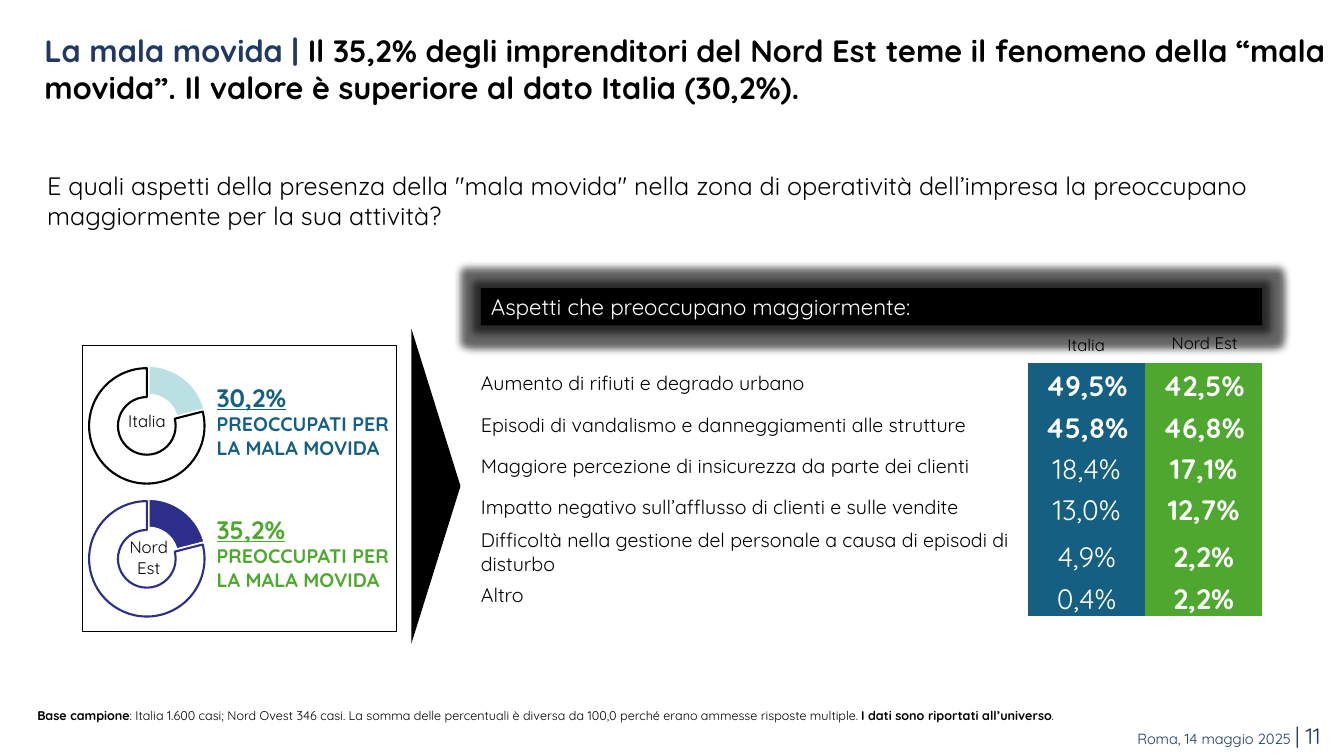
"""Build the slide on business owners' worries about the "mala movida"."""
from dataclasses import dataclass

from lxml.etree import SubElement
from pptx import Presentation
from pptx.chart.data import CategoryChartData
from pptx.dml.color import RGBColor
from pptx.enum.chart import XL_CHART_TYPE as ChartType
from pptx.enum.shapes import MSO_SHAPE as Preset
from pptx.enum.text import MSO_ANCHOR as Anchor, MSO_AUTO_SIZE as AutoSize, PP_ALIGN as Align
from pptx.oxml import parse_xml
from pptx.oxml.ns import nsdecls, qn
from pptx.util import Cm, Pt


@dataclass(frozen=True)
class Theme:
    """Hold the font, colours and type sizes of the slide."""
    font: str = "Quicksand"
    black: str = "000000"
    white: str = "FFFFFF"
    navy: str = "203864"
    italy: str = "156082"
    north_east: str = "4EA72E"
    pale_slice: str = "BBE0E3"
    dark_slice: str = "2D2D8A"
    title: float = 22
    figure: float = 20
    lead: float = 18
    heading: float = 16
    body: float = 14
    label: float = 12
    footer: float = 10.5
    note: float = 9


THEME = Theme()
NO_STYLE = "{2D5ABB26-0587-4C30-8999-92F81FD0307C}"
ASPECTS = [
    ("Aumento di rifiuti e degrado urbano", "49,5%", "42,5%"),
    ("Episodi di vandalismo e danneggiamenti alle strutture", "45,8%", "46,8%"),
    ("Maggiore percezione di insicurezza da parte dei clienti", "18,4%", "17,1%"),
    ("Impatto negativo sull’afflusso di clienti e sulle vendite", "13,0%", "12,7%"),
    ("Difficoltà nella gestione del personale a causa di episodi di disturbo", "4,9%", "2,2%"),
    ("Altro", "0,4%", "2,2%"),
]


def apply_format(target, values):
    """Set each named attribute on the target."""
    for name, value in values.items():
        setattr(target, name, value)


def box(left, top, width, height):
    """Turn centimetres into a position and a size."""
    return Cm(left), Cm(top), Cm(width), Cm(height)


def write(frame, paragraphs, **paragraph_format):
    """Fill a text frame with paragraphs of (text, size, colour, font format) runs."""
    frame.word_wrap = True
    for index, runs in enumerate(paragraphs):
        paragraph = frame.paragraphs[0] if index == 0 else frame.add_paragraph()
        apply_format(paragraph, {"alignment": Align.LEFT, **paragraph_format})
        for text, size, colour, font_format in runs:
            run = paragraph.add_run()
            run.text = text
            values = {"name": THEME.font, "size": Pt(size), "bold": False, **font_format}
            apply_format(run.font, values)
            run.font.color.rgb = RGBColor.from_string(colour)


def add_text(slide, place, paragraphs, **paragraph_format):
    """Add a wrapping text box."""
    shape = slide.shapes.add_textbox(*box(*place))
    write(shape.text_frame, paragraphs, **paragraph_format)


def add_preset(slide, preset, place, fill=None, line=None):
    """Add a preset shape without shadow."""
    shape = slide.shapes.add_shape(preset, *box(*place))
    shape.shadow.inherit = False
    if fill:
        shape.fill.solid()
        shape.fill.fore_color.rgb = RGBColor.from_string(fill)
    else:
        shape.fill.background()
    if line:
        shape.line.color.rgb = RGBColor.from_string(line)
        shape.line.width = Pt(1)
    else:
        shape.line.fill.background()
    return shape


def add_label(slide, place, *lines):
    """Add a small centred label."""
    shape = add_preset(slide, Preset.ROUNDED_RECTANGLE, place)
    shape.text_frame.vertical_anchor = Anchor.TOP
    write(shape.text_frame, [[(line, THEME.label, THEME.black, {})] for line in lines],
          alignment=Align.CENTER)


def add_title(slide):
    """Place and fill the title."""
    title = slide.shapes.title
    apply_format(title, dict(zip(("left", "top", "width", "height"),
                                 box(0.94, 0.69, 32.79, 2.08))))
    apply_format(title.text_frame, {
        "vertical_anchor": Anchor.TOP, "auto_size": AutoSize.NONE,
        "margin_left": Cm(0.18), "margin_right": Cm(0.18),
        "margin_top": Cm(0.1), "margin_bottom": Cm(0.1)})
    bold = {"bold": True}
    write(title.text_frame, [[
        ("La mala movida | ", THEME.title, THEME.navy, bold),
        ("Il 35,2% degli imprenditori del Nord Est teme il fenomeno della “mala movida”. "
         "Il valore è superiore al dato Italia (30,2%).", THEME.title, THEME.black, bold)]],
        line_spacing=1.0)


def add_heading(slide):
    """Add the glowing bar above the table."""
    bar = add_preset(slide, Preset.RECTANGLE, (12.12, 7.26, 19.69, 0.94), THEME.black)
    write(bar.text_frame, [[
        ("Aspetti che preoccupano maggiormente:", THEME.heading, THEME.white, {})]])
    effects = bar._element.spPr.find(qn("a:effectLst"))
    glow = SubElement(effects, qn("a:glow"), rad="139700")
    colour = SubElement(glow, qn("a:srgbClr"), val=THEME.black)
    SubElement(colour, qn("a:alpha"), val="60000")


def add_aspects(slide):
    """Add the table of worrying aspects."""
    graphic = slide.shapes.add_table(len(ASPECTS), 3, *box(12.12, 9.14, 19.69, 6.24))
    table = graphic.table
    apply_format(table, {"first_row": False, "horz_banding": False})
    table._tbl.tblPr.find(qn("a:tableStyleId")).text = NO_STYLE
    for column, width in zip(table.columns, (13.79, 2.95, 2.95)):
        column.width = Cm(width)
    fills = (THEME.white, THEME.italy, THEME.north_east)
    for row, values in enumerate(ASPECTS):
        for column, (value, fill) in enumerate(zip(values, fills)):
            cell = table.cell(row, column)
            cell.fill.solid()
            cell.fill.fore_color.rgb = RGBColor.from_string(fill)
            margin = Cm(0.03) if column else 0
            apply_format(cell, {
                "margin_left": margin, "margin_right": margin,
                "margin_top": margin, "margin_bottom": 0,
                "vertical_anchor": Anchor.BOTTOM if column else Anchor.MIDDLE})
            if column:
                bold = column == 2 or row < 2
                run = (value, THEME.figure, THEME.white, {"bold": bold})
            else:
                run = (value, THEME.body, THEME.black, {})
            write(cell.text_frame, [[run]], alignment=Align.CENTER if column else Align.LEFT)


def add_ring(slide, top, slice_colour, outline):
    """Add a doughnut with one coloured slice."""
    data = CategoryChartData()
    data.categories = ["1", "2"]
    data.add_series("Series 1", (21, 79))
    chart = slide.shapes.add_chart(ChartType.DOUGHNUT, *box(0.58, top, 6.35, 3.73), data).chart
    apply_format(chart, {"has_legend": False, "has_title": False})
    apply_format(chart.font, {"name": "Arial", "size": Pt(10)})
    chart.font.color.rgb = RGBColor.from_string(THEME.black)
    series = chart.plots[0].series[0]
    for index, (fill, line) in enumerate(((slice_colour, THEME.white), (THEME.white, outline))):
        style = series.points[index].format
        style.fill.solid()
        style.fill.fore_color.rgb = RGBColor.from_string(fill)
        style.line.color.rgb = RGBColor.from_string(line)
        style.line.width = Pt(1.5)
    namespace = nsdecls("c")
    series._element.find(qn("c:dPt")).addprevious(
        parse_xml(f'<c:explosion {namespace} val="5"/>'))
    plot_area = chart._chartSpace.chart.plotArea
    for layout in plot_area.findall(qn("c:layout")):
        plot_area.remove(layout)
    spots = "".join(f'<c:{name} val="{value}"/>' for name, value in (
        ("layoutTarget", "inner"), ("xMode", "edge"), ("yMode", "edge"),
        ("x", 0.26), ("y", 0.1), ("w", 0.47), ("h", 0.8)))
    plot_area.insert(0, parse_xml(
        f"<c:layout {namespace}><c:manualLayout>{spots}</c:manualLayout></c:layout>"))
    plot_area.find(".//" + qn("c:holeSize")).set("val", "65")


def add_share(slide, top, share, colour):
    """Add the share of worried owners beside a ring."""
    lines = ((share, THEME.lead, True), ("PREOCCUPATI PER", THEME.body, False),
             ("LA MALA MOVIDA", THEME.body, False))
    add_text(slide, (5.21, top, 7.57, 2.24), [
        [(text, size, colour, {"bold": True, "underline": underline})]
        for text, size, underline in lines])


def main():
    """Build and save the slide."""
    presentation = Presentation()
    apply_format(presentation, {"slide_width": Cm(33.87), "slide_height": Cm(19.05)})
    slide = presentation.slides.add_slide(presentation.slide_layouts[5])
    add_title(slide)
    add_text(slide, (15.93, 18.06, 17.6, 0.94), [[
        ("Roma, 14 maggio 2025 ", THEME.footer, THEME.navy, {}),
        ("| 11", THEME.heading, THEME.navy, {})]], alignment=Align.RIGHT)
    add_text(slide, (0.94, 4.17, 32.18, 1.8), [[
        ("E quali aspetti della presenza della \"mala movida\" nella zona di operatività "
         "dell’impresa la preoccupano maggiormente per la sua attività?",
         THEME.lead, THEME.black, {})]])
    note = (("Base campione", True),
            (": Italia 1.600 casi; Nord Ovest 346 casi. La somma delle percentuali è diversa "
             "da 100,0 perché erano ammesse risposte multiple. ", False),
            ("I dati sono riportati all’universo", True), (".", False))
    add_text(slide, (0.69, 17.68, 30.73, 0.64), [[
        (text, THEME.note, THEME.black, {"bold": bold}) for text, bold in note]],
        alignment=Align.JUSTIFY, line_spacing=1.1)
    add_aspects(slide)
    add_heading(slide)
    arrow = add_preset(slide, Preset.ISOSCELES_TRIANGLE, (7.01, 11.63, 7.95, 1.24), THEME.black)
    arrow.rotation = 90
    add_preset(slide, Preset.RECTANGLE, (2.08, 8.71, 7.92, 7.21), line=THEME.black)
    add_ring(slide, 8.84, THEME.pale_slice, THEME.black)
    add_ring(slide, 12.19, THEME.dark_slice, THEME.dark_slice)
    add_share(slide, 9.5, "30,2%", THEME.italy)
    add_share(slide, 12.83, "35,2%", THEME.north_east)
    add_label(slide, (26.31, 8.23, 2.13, 1.42), "Italia")
    add_label(slide, (28.52, 8.18, 3.68, 1.47), "Nord Est")
    add_label(slide, (2.64, 10.16, 2.13, 1.42), "Italia")
    add_label(slide, (1.91, 13.34, 3.68, 1.47), "Nord", "Est")
    presentation.save("out.pptx")


if __name__ == "__main__":
    main()
